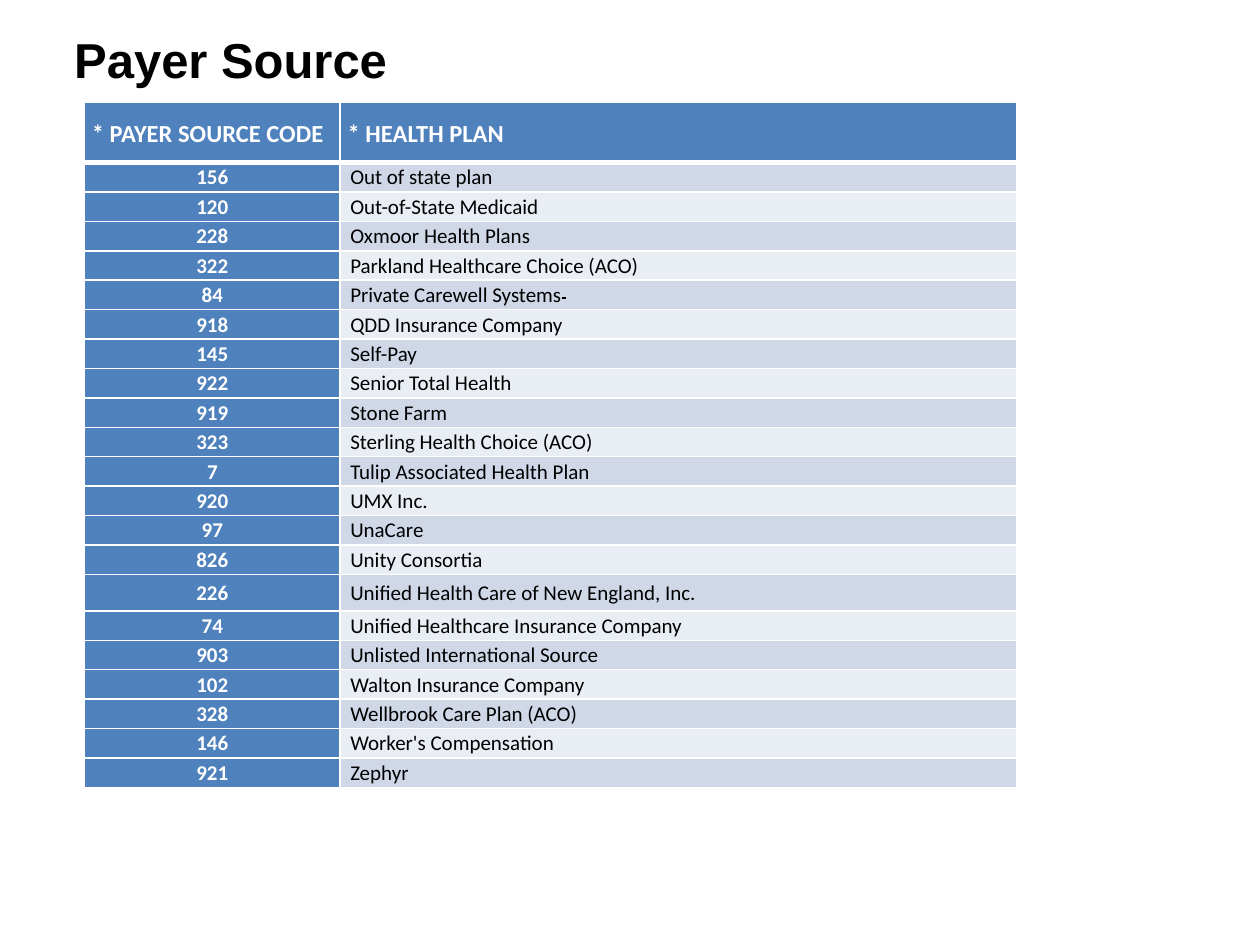
from dataclasses import dataclass

from lxml import etree
from pptx import Presentation
from pptx import util as u
from pptx.dml.color import RGBColor
from pptx.enum import text
from pptx.oxml.ns import qn


@dataclass(frozen=True)
class Theme:
    title_font: str = "Arial"
    table_font: str = "Calibri"
    title_size: int = 28
    header_size: int = 14
    body_size: int = 12
    black: str = "000000"
    white: str = "FFFFFF"
    blue: str = "4F81BD"
    bands: tuple = ("D0D8E8", "E9EDF4")
    line: float = 1
    header_line: float = 3


HEADERS = ("* PAYER SOURCE CODE", "* HEALTH PLAN")
PAYERS = [
    ("156", "Out of state plan"),
    ("120", "Out-of-State Medicaid"),
    ("228", "Oxmoor Health Plans"),
    ("322", "Parkland Healthcare Choice (ACO)"),
    ("84", "Private Carewell Systems"),
    ("918", "QDD Insurance Company"),
    ("145", "Self-Pay"),
    ("922", "Senior Total Health"),
    ("919", "Stone Farm"),
    ("323", "Sterling Health Choice (ACO)"),
    ("7", "Tulip Associated Health Plan"),
    ("920", "UMX Inc."),
    ("97", "UnaCare"),
    ("826", "Unity Consortia"),
    ("226", "Unified Health Care of New England, Inc."),
    ("74", "Unified Healthcare Insurance Company"),
    ("903", "Unlisted International Source"),
    ("102", "Walton Insurance Company"),
    ("328", "Wellbrook Care Plan (ACO)"),
    ("146", "Worker's Compensation"),
    ("921", "Zephyr"),
]
STRUCK_CODE = "84"  # its plan name ends in a struck-through space
TALL_CODE = "226"


class SlideBuilder:
    def __init__(self, slide, theme):
        self.s = slide
        self.theme = theme

    def run(self, p, content, font, size, color, bold):
        r = p.add_run()
        r.text = content
        values = {"name": font, "size": u.Pt(size), "bold": bold}
        for name, value in values.items():
            setattr(r.font, name, value)
        r.font.color.rgb = RGBColor.from_string(color)
        return r

    def title(self, content, left, top, width, height):
        t = self.theme
        sp = self.s.shapes.add_textbox(*map(u.Inches, (left, top, width, height)))
        tf = sp.text_frame
        tf.word_wrap = True
        tf.vertical_anchor = text.MSO_ANCHOR.MIDDLE
        self.run(tf.paragraphs[0], content, t.title_font, t.title_size, t.black, True)

    def borders(self, cell, top, bottom):
        tcPr = cell._tc.get_or_add_tcPr()
        widths = {"lnL": self.theme.line, "lnR": self.theme.line,
                  "lnT": top, "lnB": bottom}
        for tag, width in widths.items():
            ln = etree.SubElement(tcPr, qn(f"a:{tag}"), w=str(u.Pt(width)))
            fill = etree.SubElement(ln, qn("a:solidFill"))
            etree.SubElement(fill, qn("a:srgbClr"), val=self.theme.white)

    def cell(self, cell, content, fill, size, color, bold, margins,
             align=None, spacing=None, top=1, bottom=1):
        self.borders(cell, top, bottom)
        cell.fill.solid()
        cell.fill.fore_color.rgb = RGBColor.from_string(fill)
        cell.vertical_anchor = text.MSO_ANCHOR.MIDDLE
        for side, value in zip(("left", "top", "right", "bottom"), margins):
            setattr(cell, f"margin_{side}", u.Inches(value))
        p = cell.text_frame.paragraphs[0]
        for name, value in {"alignment": align, "line_spacing": spacing}.items():
            setattr(p, name, value)
        self.run(p, content, self.theme.table_font, size, color, bold)
        return p

    def payer_table(self, left, top, col_widths, height, header_height, tall_height):
        t = self.theme
        table = self.s.shapes.add_table(
            len(PAYERS) + 1, len(HEADERS), u.Inches(left), u.Inches(top),
            u.Inches(sum(col_widths)), u.Inches(height)).table
        table.first_row = table.horz_banding = False
        for column, width in zip(table.columns, col_widths):
            column.width = u.Inches(width)

        # Header row
        table.rows[0].height = u.Inches(header_height)
        for i, header in enumerate(HEADERS):
            self.cell(table.cell(0, i), header, t.blue, t.header_size, t.white, True,
                      (0.06, 0, 0.06, 0), spacing=1.15, bottom=t.header_line)

        # Payer rows share the height left by the header and the tall row
        row_height = (height - header_height - tall_height) / (len(PAYERS) - 1)
        for i, (code, plan) in enumerate(PAYERS, start=1):
            table.rows[i].height = u.Inches(
                tall_height if code == TALL_CODE else row_height)
            edge = t.header_line if i == 1 else t.line
            self.cell(table.cell(i, 0), code, t.blue, t.body_size, t.white, True,
                      (0.01, 0.01, 0.01, 0), align=text.PP_ALIGN.CENTER, top=edge)
            p = self.cell(table.cell(i, 1), plan, t.bands[(i - 1) % 2], t.body_size,
                          t.black, False, (0.08, 0.01, 0.01, 0), top=edge)
            if code == STRUCK_CODE:
                r = self.run(p, " ", t.table_font, t.body_size, t.black, False)
                r._r.get_or_add_rPr().set("strike", "sngStrike")


def main():
    prs = Presentation()
    prs.slide_width, prs.slide_height = u.Inches(10), u.Inches(7.5)
    s = prs.slides.add_slide(prs.slide_layouts[6])
    builder = SlideBuilder(s, Theme())
    builder.title("Payer Source", 0.49, 0.12, 8.79, 0.69)
    builder.payer_table(0.67, 0.81, (2.03, 5.37), height=5.44,
                        header_height=0.48, tall_height=0.29)
    prs.save("out.pptx")


if __name__ == "__main__":
    main()
